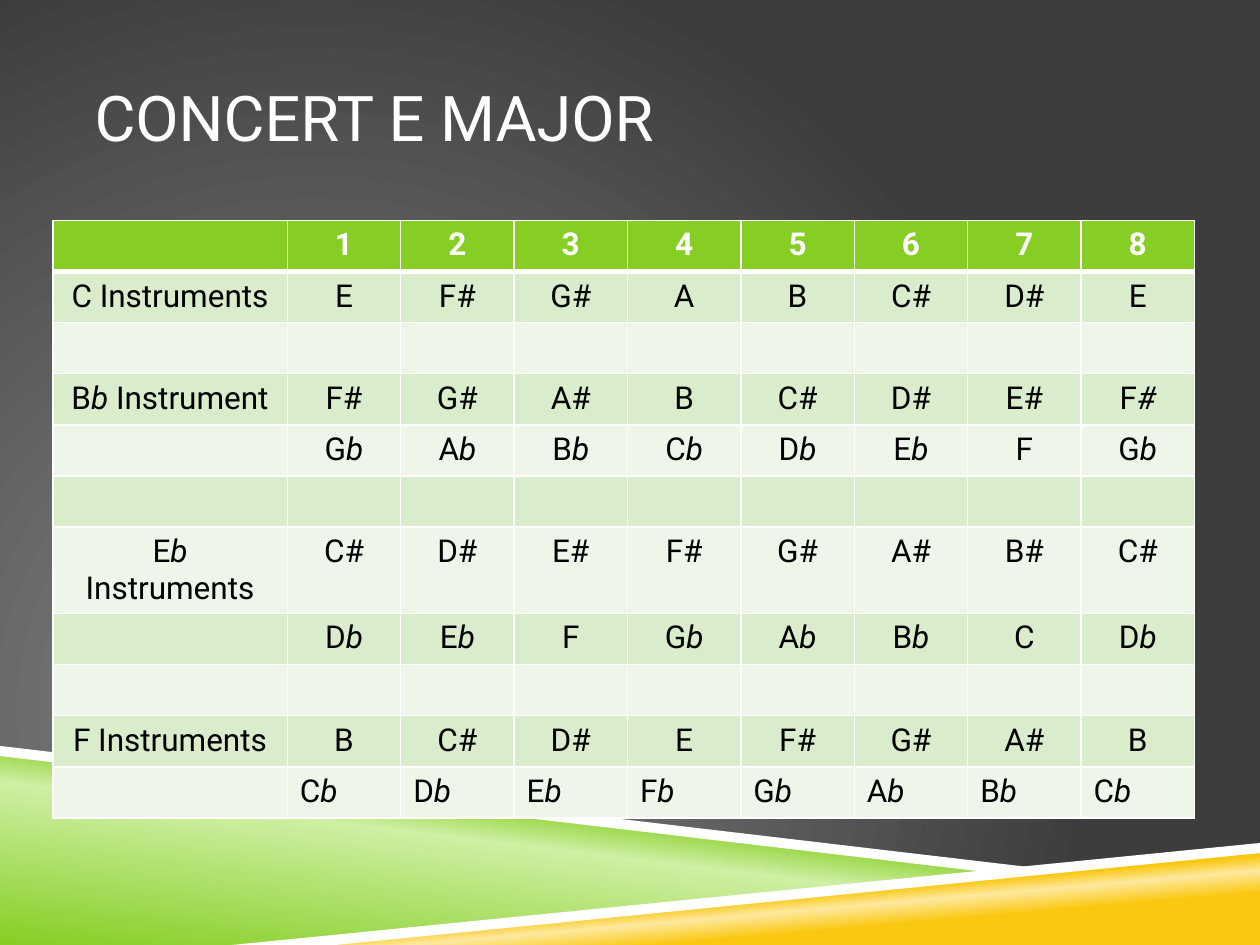
"""Build a slide that transposes the concert E major scale for each instrument group."""
import lxml.etree
import pptx
import pptx.dml.color
import pptx.enum.text
import pptx.oxml
import pptx.oxml.ns
import pptx.util

WHITE = pptx.dml.color.RGBColor(0xFF, 0xFF, 0xFF)
BLACK = pptx.dml.color.RGBColor(0x00, 0x00, 0x00)
LIGHT_GRAY = pptx.dml.color.RGBColor(0x87, 0x87, 0x87)
DARK_GRAY = pptx.dml.color.RGBColor(0x3D, 0x3D, 0x3D)
GREEN = pptx.dml.color.RGBColor(0x86, 0xCE, 0x24)
PALE_GREEN = pptx.dml.color.RGBColor(0xCF, 0xEF, 0xA4)
YELLOW = pptx.dml.color.RGBColor(0xFA, 0xC8, 0x10)
PALE_YELLOW = pptx.dml.color.RGBColor(0xFD, 0xE9, 0x9F)
BAND_DARK = pptx.dml.color.RGBColor(0xD9, 0xED, 0xCD)
BAND_LIGHT = pptx.dml.color.RGBColor(0xED, 0xF6, 0xE8)
ALIGN = pptx.enum.text.PP_ALIGN
UNIT = pptx.util.Inches(0.01)
NAMESPACE = pptx.oxml.ns.nsdecls("a")


def write(para, text, size=18, color=BLACK, bold=False, align=ALIGN.CENTER):
    """Write text into a paragraph, with the parts between asterisks in italics."""
    para.alignment = align
    for index, part in enumerate(text.split("*")):
        if part:
            span = para.add_run()
            span.text = part
            span.font.name = "Roboto"
            span.font.size = pptx.util.Pt(size)
            span.font.color.rgb = color
            span.font.bold = bold
            span.font.italic = index % 2 == 1


def set_gradient(fill, properties, stops, direction):
    """Give an element's properties a gradient fill with the given stops."""
    fill.solid()
    stop_list = "".join(
        f'<a:gs pos="{share * 1000}"><a:srgbClr val="{color}"/></a:gs>' for share, color in stops
    )
    gradient = pptx.oxml.parse_xml(
        f'<a:gradFill {NAMESPACE} rotWithShape="1"><a:gsLst>{stop_list}</a:gsLst>{direction}</a:gradFill>'
    )
    properties.replace(properties.find(pptx.oxml.ns.qn("a:solidFill")), gradient)


deck = pptx.Presentation()
deck.slide_width, deck.slide_height = 1000 * UNIT, 750 * UNIT
page = deck.slides.add_slide(deck.slide_layouts[5])

background = page.background.fill
background.solid()
set_gradient(
    background,
    page._element.find(".//" + pptx.oxml.ns.qn("p:bgPr")),
    [(0, LIGHT_GRAY), (100, DARK_GRAY)],
    '<a:path path="circle"><a:fillToRect l="50000" t="100000" r="100000" b="50000"/></a:path>',
)

wedges = [
    ([(0, 597), (792, 692), (200, 750), (0, 750)],
     [(0, GREEN), (52, PALE_GREEN), (66, GREEN)], 277),
    ([(198, 750), (1000, 672), (1000, 750)],
     [(28, YELLOW), (40, PALE_YELLOW), (48, YELLOW)], 265),
    ([(0, 592), (0, 600), (790, 693), (832, 690)], None, None),
    ([(1000, 669), (184, 750), (266, 750), (1000, 677)], None, None),
]
for points, stops, angle in wedges:
    builder = page.shapes.build_freeform(*points[0], scale=UNIT)
    builder.add_line_segments(points[1:], close=True)
    wedge = builder.convert_to_shape()
    wedge.shadow.inherit = False
    wedge.line.fill.background()
    if stops:
        set_gradient(wedge.fill, wedge._element.spPr, stops,
                     f'<a:lin ang="{angle * 60000}" scaled="0"/>')
    else:
        wedge.fill.solid()
        wedge.fill.fore_color.rgb = WHITE

title = page.shapes.title
page.shapes._spTree.append(title._element)
title.left, title.top, title.width, title.height = (side * UNIT for side in (75, 30, 850, 125))
title.text_frame.margin_left = title.text_frame.margin_right = 0
title.text_frame.vertical_anchor = pptx.enum.text.MSO_ANCHOR.MIDDLE
write(title.text_frame.paragraphs[0], "CONCERT E MAJOR", size=36, color=WHITE, align=ALIGN.LEFT)

rows = [
    "|1|2|3|4|5|6|7|8",
    "C Instruments|E|F#|G#|A|B|C#|D#|E",
    "||||||||",
    "B*b* Instrument|F#|G#|A#|B|C#|D#|E#|F*#*",
    "|G*b*|A*b*|B*b*|C*b*|D*b*|E*b*|F|G*b*",
    "||||||||",
    "E*b* Instruments|C#|D#|E#|F#|G#|A#|B#|C#",
    "|D*b*|E*b*|F|G*b*|A*b*|B*b*|C|D*b*",
    "||||||||",
    "F Instruments|B|C#|D#|E|F#|G#|A#|B",
    "|C*b*|D*b*|E*b*|F*b*|G*b*|A*b*|B*b*|C*b*",
]
table = page.shapes.add_table(
    len(rows), 9, 42 * UNIT, 175 * UNIT, 906 * UNIT, 446 * UNIT
).table
for index, column in enumerate(table.columns):
    column.width = (90 if index else 186) * UNIT

for row_index, row in enumerate(rows):
    header, last = row_index == 0, row_index == len(rows) - 1
    band = GREEN if header else (BAND_DARK if row_index % 2 else BAND_LIGHT)
    widths = {"L": 1, "R": 1, "T": 3 if row_index == 1 else 1, "B": 3 if header else 1}
    for column_index, text in enumerate(row.split("|")):
        cell = table.cell(row_index, column_index)
        properties = cell._tc.get_or_add_tcPr()
        for side, width in widths.items():
            properties.append(pptx.oxml.parse_xml(
                f'<a:ln{side} {NAMESPACE} w="{width * 12700}"><a:solidFill>'
                f'<a:srgbClr val="{WHITE}"/></a:solidFill></a:ln{side}>'
            ))
        cell.fill.solid()
        cell.fill.fore_color.rgb = band
        write(cell.text_frame.paragraphs[0], text, color=WHITE if header else BLACK,
              bold=header, align=ALIGN.LEFT if last else ALIGN.CENTER)

deck.save("out.pptx")
